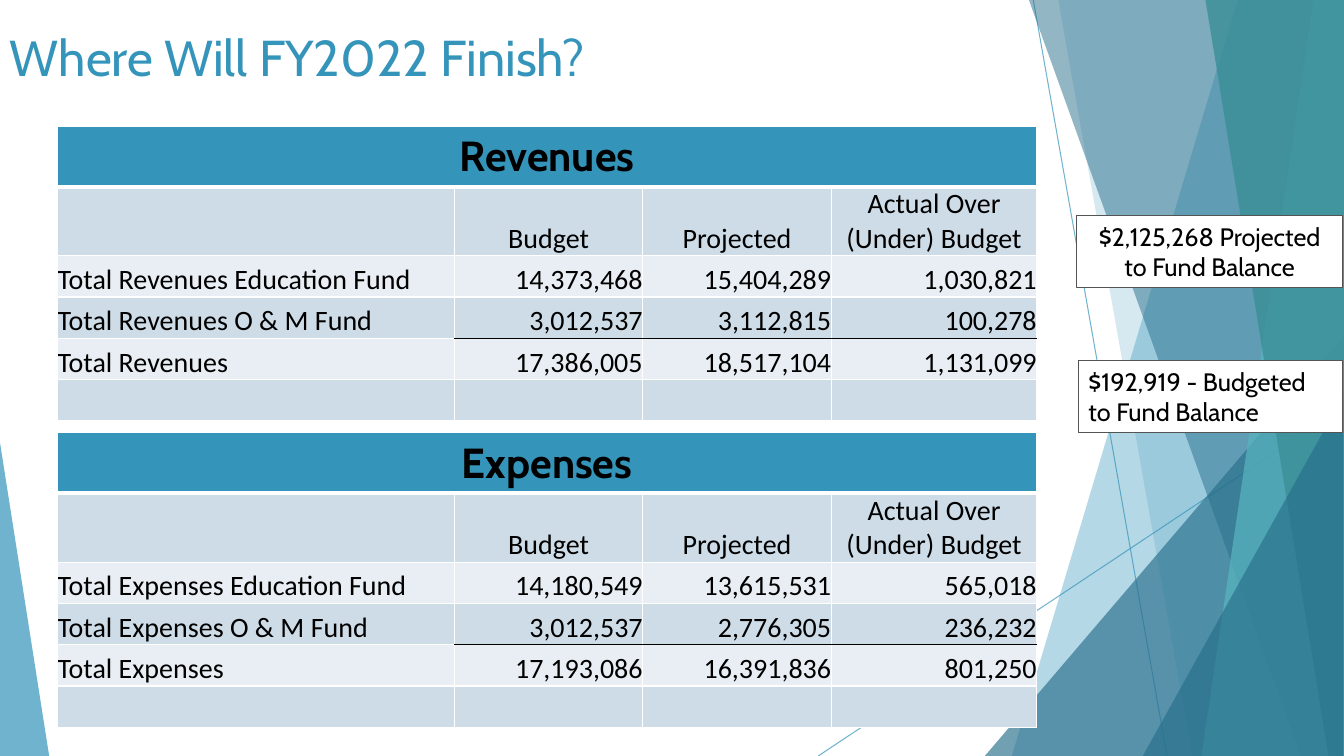
from dataclasses import dataclass

from lxml import etree
from pptx import Presentation
from pptx.dml.color import RGBColor
from pptx.enum.shapes import MSO_CONNECTOR, MSO_SHAPE
from pptx.enum.text import MSO_ANCHOR, PP_ALIGN
from pptx.oxml.ns import qn
from pptx.util import Cm, Pt

LEFT, CENTER, RIGHT = PP_ALIGN.LEFT, PP_ALIGN.CENTER, PP_ALIGN.RIGHT
TOP, MIDDLE, BOTTOM = MSO_ANCHOR.TOP, MSO_ANCHOR.MIDDLE, MSO_ANCHOR.BOTTOM
RECTANGLE, TRIANGLE = MSO_SHAPE.RECTANGLE, MSO_SHAPE.ISOSCELES_TRIANGLE
STRAIGHT = MSO_CONNECTOR.STRAIGHT


@dataclass(frozen=True)
class Theme:
    blue: str = "3494BA"
    deep_blue: str = "276F8B"
    aqua: str = "58B6C0"
    teal: str = "3A8F98"
    dark_band: str = "CEDCE7"
    light_band: str = "E8EEF3"
    outline: str = "535555"
    white: str = "FFFFFF"
    black: str = "000000"
    heading_font: str = "Cabin"
    body_font: str = "Calibri"
    title_size: int = 36
    heading_size: int = 30
    body_size: int = 20
    callout_size: int = 18


THEME = Theme()
WIDTH, HEIGHT = 33.87, 19.05
COLUMN_WIDTHS = (10, 4.75, 4.75, 5.18)
ROW_HEIGHTS = (1.52, 1.74, 1.04, 1.04, 1.04, 1.04)
COLUMN_TITLES = ("", "Budget", "Projected", "Actual Over (Under) Budget")
LAST_ITEM_ROW, TOTAL_ROW = 3, 4

REVENUES = (
    ("Total Revenues Education Fund", "14,373,468", "15,404,289", "1,030,821"),
    ("Total Revenues O & M Fund", "3,012,537", "3,112,815", "100,278"),
    ("Total Revenues", "17,386,005", "18,517,104", "1,131,099"),
)
EXPENSES = (
    ("Total Expenses Education Fund", "14,180,549", "13,615,531", "565,018"),
    ("Total Expenses O & M Fund", "3,012,537", "2,776,305", "236,232"),
    ("Total Expenses", "17,193,086", "16,391,836", "801,250"),
)


def write_text(frame, text, *, size, font=THEME.heading_font, color=THEME.black,
               bold=False, align=LEFT):
    paragraph = frame.paragraphs[0]
    paragraph.alignment = align
    run = paragraph.add_run()
    run.text = text
    run.font.size = Pt(size)
    run.font.name = font
    run.font.bold = bold
    run.font.color.rgb = RGBColor.from_string(color)


def paint(fill, color, opacity=100):
    """Apply a solid fill, with its opacity in percent."""
    fill.solid()
    fill.fore_color.rgb = RGBColor.from_string(color)
    if opacity < 100:
        for node in fill._xPr.iter(qn("a:srgbClr")):
            etree.SubElement(node, qn("a:alpha"), val=str(opacity * 1000))


def add_ray(slide, start, end):
    ray = slide.shapes.add_connector(STRAIGHT, *map(Cm, start + end))
    ray.line.width = Pt(0.75)
    paint(ray.line.fill, THEME.blue, 70)
    etree.SubElement(ray._element.spPr, qn("a:effectLst"))


def finish_facet(shape, color, opacity):
    paint(shape.fill, color, opacity)
    shape.line.fill.background()
    shape.shadow.inherit = False


def add_band(slide, top_x, bottom_x, color, opacity):
    """Fill the area from a slanted edge to the right side of the slide."""
    builder = slide.shapes.build_freeform(Cm(top_x), 0)
    corners = ((WIDTH, 0), (WIDTH, HEIGHT), (bottom_x, HEIGHT))
    builder.add_line_segments([(Cm(x), Cm(y)) for x, y in corners])
    finish_facet(builder.convert_to_shape(), color, opacity)


def add_triangle(slide, left, top, width, peak, color, opacity):
    """Add a triangle that stands on the bottom edge of the slide."""
    shape = slide.shapes.add_shape(
        TRIANGLE, Cm(left), Cm(top), Cm(width), Cm(HEIGHT - top))
    shape.adjustments[0] = peak
    finish_facet(shape, color, opacity)


def add_background(slide):
    add_ray(slide, (26.04, 0), (29.41, HEIGHT))
    add_ray(slide, (WIDTH, 10.24), (20.62, HEIGHT))
    add_band(slide, 31.19, 25.5, THEME.blue, 36)
    add_band(slide, 26.67, 30.05, THEME.blue, 20)
    add_triangle(slide, 24.82, 8.46, 9.05, 1, THEME.deep_blue, 66)
    add_band(slide, 25.93, 32.79, THEME.deep_blue, 50)
    add_band(slide, 33.1, 30.28, THEME.aqua, 70)
    add_band(slide, 30.38, 33.48, THEME.teal, 80)
    add_triangle(slide, 28.8, 9.98, 5.05, 1, THEME.deep_blue, 66)
    add_triangle(slide, 0, 11.15, 1.24, 0, THEME.blue, 70)


def add_title(slide, text):
    box = slide.shapes.add_textbox(0, Cm(0.53), Cm(18.92), Cm(2.64))
    box.text_frame.word_wrap = True
    box.text_frame.vertical_anchor = TOP
    write_text(box.text_frame, text, size=THEME.title_size, color=THEME.blue)


def set_borders(cell, top=THEME.white, bottom=THEME.white, bottom_width=1):
    properties = cell._tc.get_or_add_tcPr()
    sides = (("L", THEME.white, 1), ("R", THEME.white, 1),
             ("T", top, 1), ("B", bottom, bottom_width))
    for index, (side, color, width) in enumerate(sides):
        line = etree.Element(qn(f"a:ln{side}"), w=str(Pt(width)))
        solid = etree.SubElement(line, qn("a:solidFill"))
        etree.SubElement(solid, qn("a:srgbClr"), val=color)
        properties.insert(index, line)


def format_body_cell(cell, row, column, text):
    cell.margin_left = cell.margin_right = cell.margin_top = cell.margin_bottom = 0
    cell.vertical_anchor = BOTTOM
    paint(cell.fill, THEME.dark_band if row % 2 else THEME.light_band)
    amount = column > 0
    set_borders(
        cell,
        top=THEME.black if amount and row == TOTAL_ROW else THEME.white,
        bottom=THEME.black if amount and row == LAST_ITEM_ROW else THEME.white)
    if text:
        align = CENTER if row == 1 else RIGHT if amount else LEFT
        write_text(cell.text_frame, text, size=THEME.body_size,
                   font=THEME.body_font, align=align)


def add_fund_table(slide, top, heading, items):
    rows = (COLUMN_TITLES, *items, ("",) * len(COLUMN_TITLES))
    table = slide.shapes.add_table(
        len(ROW_HEIGHTS), len(COLUMN_WIDTHS), Cm(1.45), Cm(top),
        Cm(sum(COLUMN_WIDTHS)), Cm(sum(ROW_HEIGHTS))).table
    for column, width in zip(table.columns, COLUMN_WIDTHS):
        column.width = Cm(width)
    for row, height in zip(table.rows, ROW_HEIGHTS):
        row.height = Cm(height)
    for cell in table.rows[0].cells:
        paint(cell.fill, THEME.blue)
        set_borders(cell, bottom_width=3)
    table.cell(0, 0).merge(table.cell(0, len(COLUMN_WIDTHS) - 1))
    write_text(table.cell(0, 0).text_frame, heading, size=THEME.heading_size,
               bold=True, align=CENTER)
    for row, texts in enumerate(rows, start=1):
        for column, text in enumerate(texts):
            format_body_cell(table.cell(row, column), row, column, text)


def add_callout(slide, left, top, width, text, align):
    shape = slide.shapes.add_shape(
        RECTANGLE, Cm(left), Cm(top), Cm(width), Cm(1.8))
    shape.shadow.inherit = False
    paint(shape.fill, THEME.white)
    paint(shape.line.fill, THEME.outline)
    shape.line.width = Pt(0.75)
    shape.text_frame.word_wrap = True
    shape.text_frame.vertical_anchor = MIDDLE
    write_text(shape.text_frame, text, size=THEME.callout_size, align=align)


def main():
    presentation = Presentation()
    presentation.slide_width = Cm(WIDTH)
    presentation.slide_height = Cm(HEIGHT)
    slide = presentation.slides.add_slide(presentation.slide_layouts[6])
    add_background(slide)
    add_title(slide, "Where Will FY2022 Finish?")
    add_fund_table(slide, 3.18, "Revenues", REVENUES)
    add_fund_table(slide, 10.9, "Expenses", EXPENSES)
    add_callout(slide, 27.13, 5.44, 6.71, "$2,125,268 Projected to Fund Balance", CENTER)
    add_callout(slide, 27.18, 9.09, 6.65, "$192,919 - Budgeted to Fund Balance", LEFT)
    presentation.save("out.pptx")


if __name__ == "__main__":
    main()
